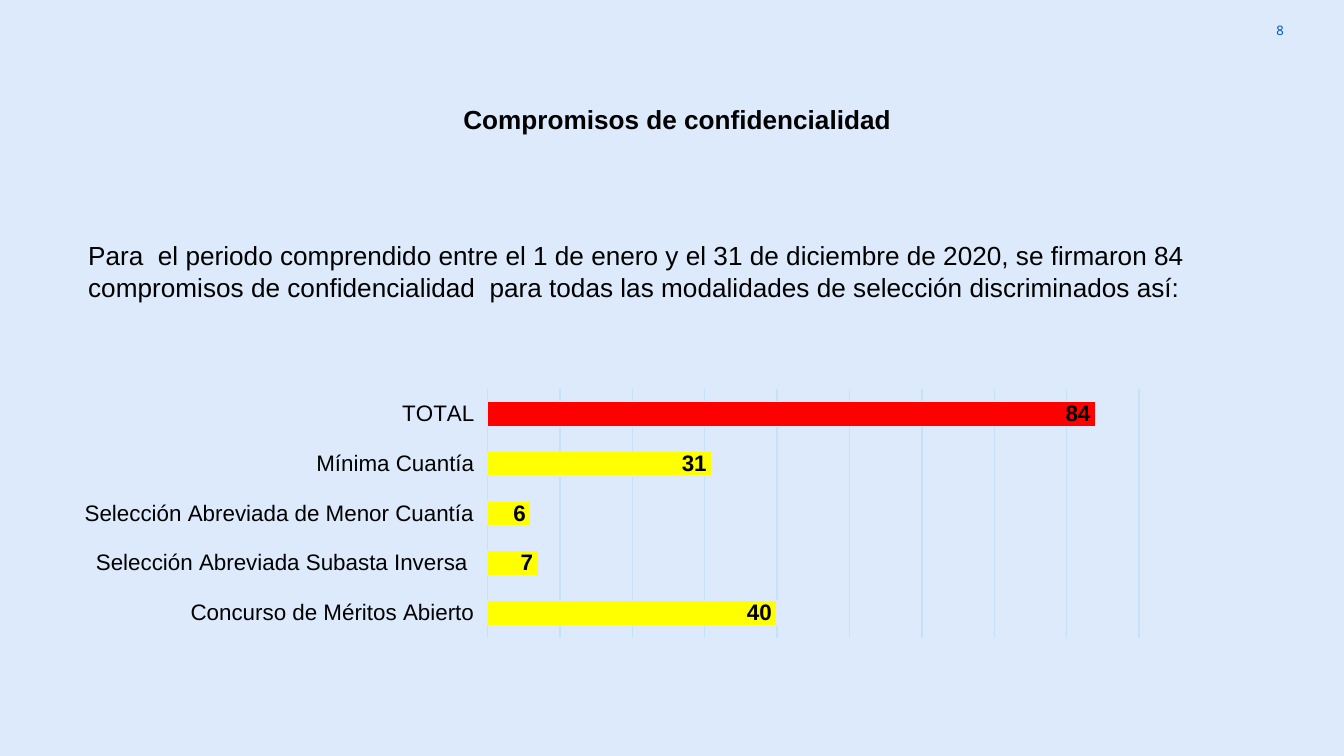
from lxml import etree
from pptx import Presentation
from pptx.chart.data import CategoryChartData
from pptx.dml.color import RGBColor
from pptx.enum.chart import XL_CHART_TYPE as ChartType
from pptx.enum.chart import XL_LABEL_POSITION as LabelPosition
from pptx.enum.chart import XL_TICK_LABEL_POSITION as TickLabelPosition
from pptx.enum.chart import XL_TICK_MARK as TickMark
from pptx.enum.text import MSO_ANCHOR as Anchor
from pptx.enum.text import PP_ALIGN as Align
from pptx.oxml.ns import qn
from pptx.util import Emu, Pt

EMU_PER_PX = 914400 / 134.4
BACKGROUND, BLACK, NUMBER_BLUE = "DCEAFB", "000000", "0054BC"
CHART_TEXT, GRID, BAR_EDGE = "073763", "C6E2FB", "DFE8F8"
YELLOW, RED = "FFFF00", "FF0000"

COMMITMENTS = {
    "Concurso de Méritos Abierto": 40,
    "Selección Abreviada Subasta Inversa ": 7,
    "Selección Abreviada de Menor Cuantía": 6,
    "Mínima Cuantía": 31,
    "TOTAL": 84,
}
PLOT_AREA = {"x": 0.38, "y": 0.02, "w": 0.6, "h": 0.96}


def px(length):
    return Emu(round(length * EMU_PER_PX))


def color(hex_value):
    return RGBColor.from_string(hex_value)


def set_font(font, size, hex_value, name="Arial", bold=False):
    font.size = Pt(size)
    font.name = name
    font.bold = bold
    font.color.rgb = color(hex_value)


def set_line(line, hex_value):
    line.color.rgb = color(hex_value)
    line.width = Pt(0.75)


def add_text(slide, box, text, size, hex_value, align=Align.LEFT,
             anchor=Anchor.TOP, name="Arial", bold=False):
    text_frame = slide.shapes.add_textbox(*map(px, box)).text_frame
    text_frame.word_wrap = True
    text_frame.vertical_anchor = anchor
    text_frame.text = text
    paragraph = text_frame.paragraphs[0]
    paragraph.alignment = align
    set_font(paragraph.runs[0].font, size, hex_value, name, bold)
    return text_frame


def set_plot_layout(chart, fractions):
    plot_area = chart.plots[0]._element.getparent()
    layout = plot_area.find(qn("c:layout"))
    if layout is None:
        layout = etree.Element(qn("c:layout"))
        plot_area.insert(0, layout)
    manual = etree.SubElement(layout, qn("c:manualLayout"))
    settings = {"layoutTarget": "inner", "xMode": "edge", "yMode": "edge"}
    for tag, value in {**settings, **fractions}.items():
        etree.SubElement(manual, qn(f"c:{tag}")).set("val", str(value))


def add_bar_chart(slide, box, values):
    data = CategoryChartData()
    data.categories = list(values)
    data.add_series("Series 1", list(values.values()))
    chart = slide.shapes.add_chart(
        ChartType.BAR_CLUSTERED, *map(px, box), data).chart
    chart.has_legend = False
    chart.has_title = False
    set_font(chart.font, 10, CHART_TEXT)
    set_plot_layout(chart, PLOT_AREA)

    # Axes
    category_axis = chart.category_axis
    category_axis.major_tick_mark = TickMark.NONE
    category_axis.minor_tick_mark = TickMark.NONE
    category_axis.tick_label_position = TickLabelPosition.LOW
    set_font(category_axis.tick_labels.font, 12, BLACK)
    set_line(category_axis.format.line, GRID)
    value_axis = chart.value_axis
    value_axis.minimum_scale, value_axis.maximum_scale = 0, 90
    value_axis.major_unit = 10
    value_axis.has_major_gridlines = True
    set_line(value_axis.major_gridlines.format.line, GRID)
    value_axis.visible = False

    # Bars, with the total picked out
    plot = chart.plots[0]
    plot.gap_width = 100
    plot.vary_by_categories = False
    series = plot.series[0]
    total = series.points[len(values) - 1]
    for bar, fill in ((series, YELLOW), (total, RED)):
        bar.format.fill.solid()
        bar.format.fill.fore_color.rgb = color(fill)
        set_line(bar.format.line, BAR_EDGE)

    # Value labels
    labels = series.data_labels
    labels.show_value = True
    labels.position = LabelPosition.INSIDE_END
    set_font(labels.font, 12, BLACK, bold=True)


def main():
    presentation = Presentation()
    presentation.slide_width, presentation.slide_height = px(1344), px(756)
    slide = presentation.slides.add_slide(presentation.slide_layouts[6])
    slide.background.fill.solid()
    slide.background.fill.fore_color.rgb = color(BACKGROUND)

    # Page number
    add_text(slide, (1216, 1, 81, 58), "8", 7, NUMBER_BLUE,
             Align.RIGHT, Anchor.MIDDLE, "Noto Sans")

    # Title and introduction
    add_text(slide, (56, 97, 1250, 46), "Compromisos de confidencialidad ",
             14, BLACK, Align.CENTER, bold=True)
    add_text(slide, (75, 233, 1231, 109),
             "Para  el periodo comprendido entre el 1 de enero y el 31 de "
             "diciembre de 2020, se firmaron 84 compromisos de "
             "confidencialidad  para todas las modalidades de selección "
             "discriminados así:", 14, BLACK)

    # Commitments by selection method
    add_bar_chart(slide, (75, 384, 1086, 259), COMMITMENTS)
    presentation.save("out.pptx")


if __name__ == "__main__":
    main()
